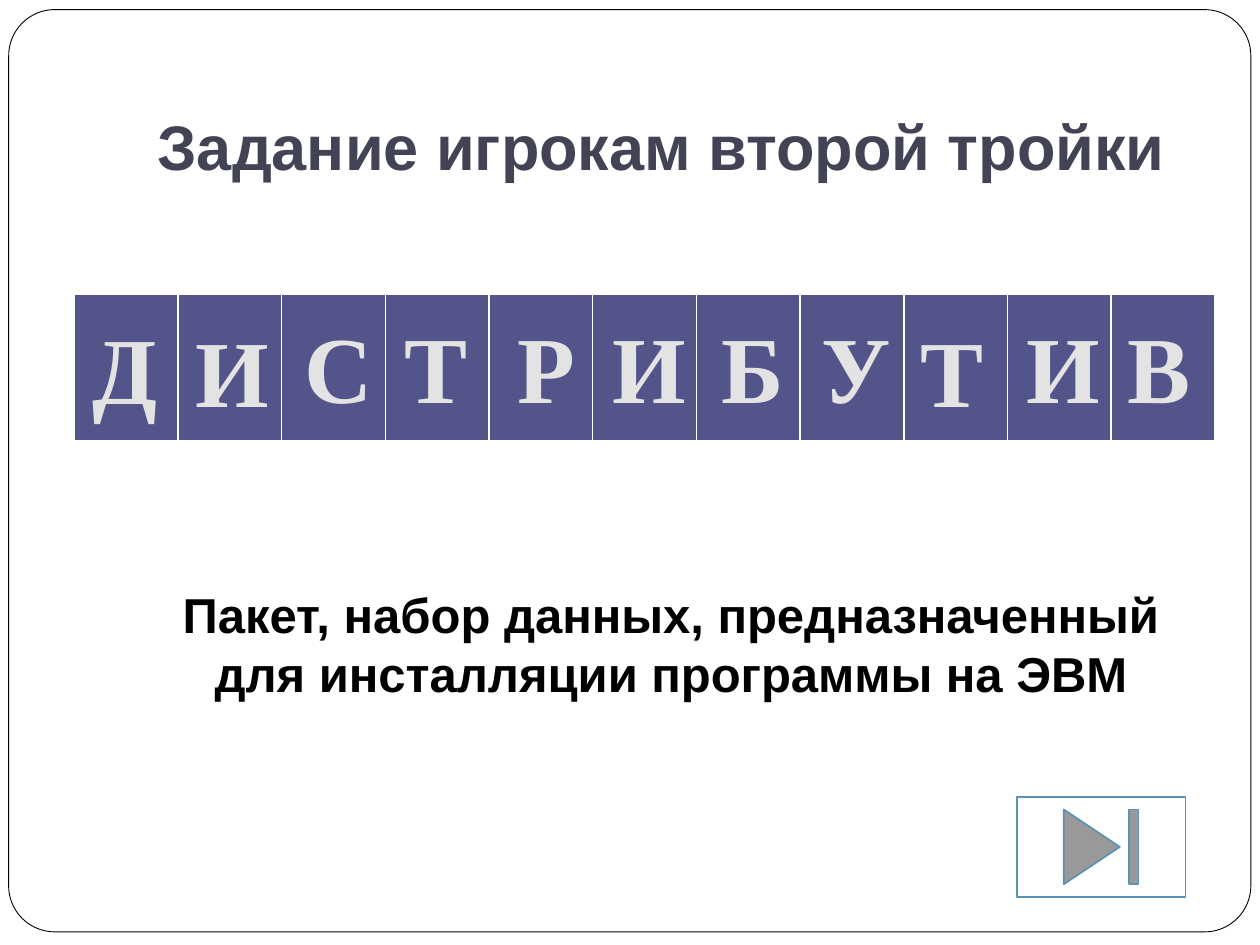
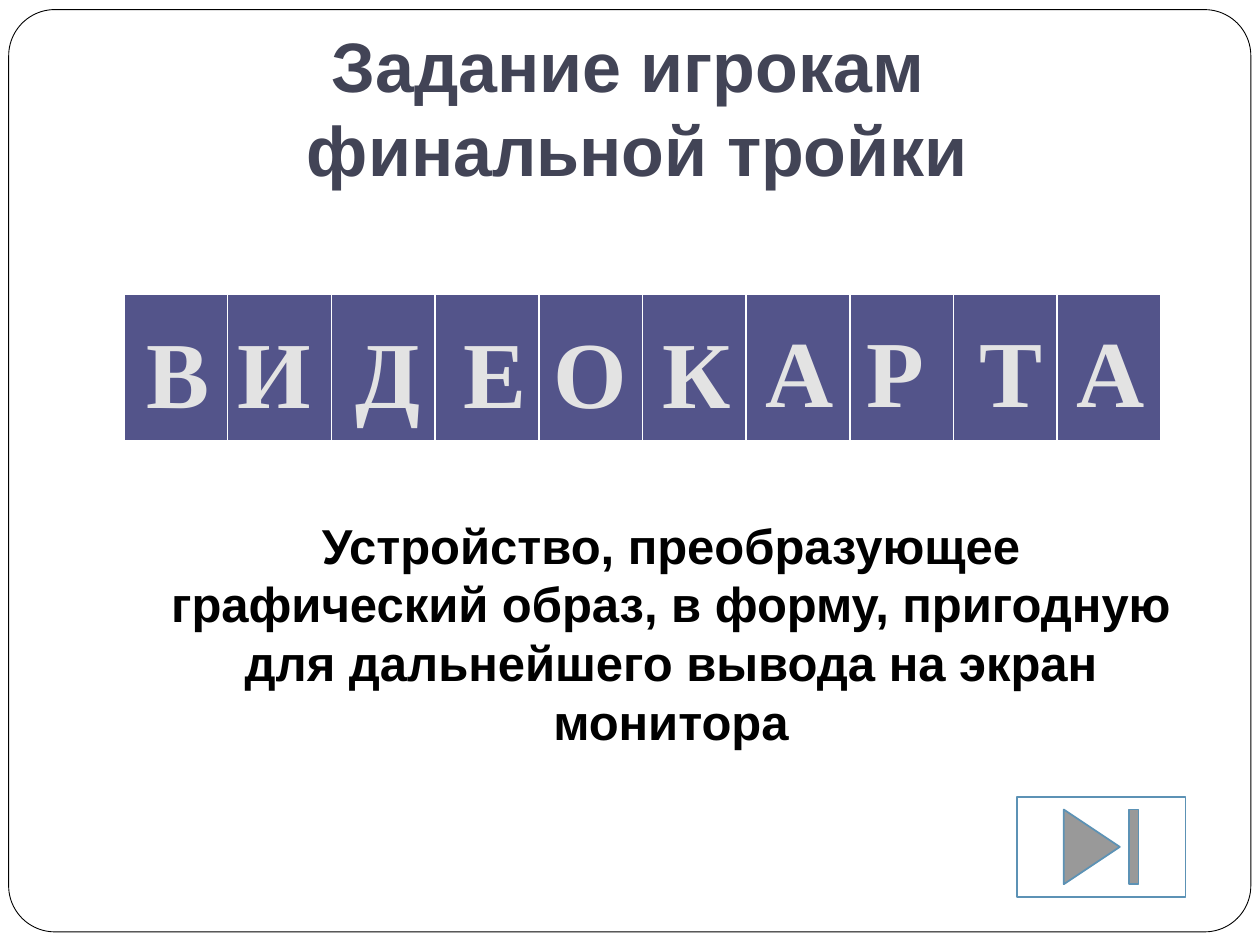
from lxml.etree import SubElement
from pptx import Presentation
from pptx.dml.color import RGBColor
from pptx.enum.shapes import MSO_SHAPE
from pptx.enum.text import MSO_ANCHOR, MSO_AUTO_SIZE, PP_ALIGN
from pptx.oxml.ns import qn
from pptx.util import Pt

WHITE = RGBColor(0xFF, 0xFF, 0xFF)
BLACK = RGBColor(0x00, 0x00, 0x00)
HEADING = RGBColor(0x42, 0x44, 0x56)
TILE = RGBColor(0x53, 0x54, 0x8A)
LETTER = RGBColor(0xE3, 0xE3, 0xE3)
LETTER_EDGE = RGBColor(0x3D, 0x40, 0x5C)
BUTTON_EDGE = RGBColor(0x5C, 0x92, 0xB5)

# Content: letters are (letter, centre x, top), all lengths in points
TASKS = [
    {
        "title": "Задание игрокам второй тройки",
        "title_size": 36,
        "title_box": (72, 21.6, 612, 90),
        "letters": [
            ("Д", 71.5, 173.5), ("И", 133, 175.5), ("С", 193.5, 173),
            ("Т", 249, 173), ("Р", 312, 173), ("И", 371, 173),
            ("Б", 430, 173), ("У", 489.5, 173), ("Т", 544, 175.5),
            ("И", 607.5, 173), ("В", 662.5, 173),
        ],
        "table_left": 42.5,
        "clue": "Пакет, набор данных, предназначенный для инсталляции программы на ЭВМ",
        "clue_inset": 220,
    },
    {
        "title": "Задание игрокам \vфинальной тройки",
        "title_size": 40,
        "title_box": (8.5, 31.7, 711.4, 84.2),
        "letters": [
            ("В", 101.5, 176), ("И", 156.5, 176), ("Д", 221.5, 176),
            ("Е", 283, 176), ("О", 337.5, 176), ("К", 398, 176),
            ("А", 457, 175.5), ("Р", 511.5, 175.5), ("Т", 578, 175.5),
            ("А", 634.5, 175.5),
        ],
        "table_left": 70.9,
        "clue": "Устройство, преобразующее графический образ, в форму, "
                "пригодную для дальнейшего вывода на экран монитора",
        "clue_inset": 180.5,
    },
]

CLUE_BOX = (72, 113.8, 612, 360)
BUTTON_BOX = (581, 455.5, 96.5, 56.9)
FRAME_BOX = (5, 5.5, 709.8, 527)
TILE_W, TILE_H, TILE_TOP = 59.25, 84.7, 168.1
LETTER_W, LETTER_H = 58, 72.7
BORDERS = {"a:lnL": 1, "a:lnR": 1, "a:lnT": 1, "a:lnB": 3}


def pts(box):
    return [Pt(v) for v in box]


def write(sp, text, size, color, font="Arial", anchor=MSO_ANCHOR.TOP, wrap=True):
    """Fill a shape with one bold centred paragraph and return the paragraph."""
    tf = sp.text_frame
    tf.auto_size = MSO_AUTO_SIZE.NONE
    tf.word_wrap = wrap
    tf.vertical_anchor = anchor
    p = tf.paragraphs[0]
    p.text = text
    p.alignment = PP_ALIGN.CENTER
    for r in p.runs:
        r.font.name, r.font.size = font, Pt(size)
        r.font.bold = True
        r.font.color.rgb = color
    return p


def add_line_xml(parent, tag, color, width):
    ln = SubElement(parent, qn(tag), w=str(Pt(width)))
    SubElement(SubElement(ln, qn("a:solidFill")), qn("a:srgbClr"), val=str(color))
    return ln


def add_outlined_shape(slide, kind, box, edge, width):
    sp = slide.shapes.add_shape(kind, *pts(box))
    sp.shadow.inherit = False
    sp.fill.solid()
    sp.fill.fore_color.rgb = WHITE
    sp.line.color.rgb = edge
    sp.line.width = Pt(width)
    return sp


def place(sp, box):
    sp.left, sp.top, sp.width, sp.height = pts(box)


def add_tiles(slide, left, count):
    table = slide.shapes.add_table(
        1, count, *pts((left, TILE_TOP, TILE_W * count, TILE_H))).table
    table.first_row = table.horz_banding = False
    for column in table.columns:
        column.width = Pt(TILE_W)
    for cell in table.iter_cells():
        tc_pr = cell._tc.get_or_add_tcPr()
        for tag, width in BORDERS.items():
            add_line_xml(tc_pr, tag, WHITE, width)
        cell.fill.solid()
        cell.fill.fore_color.rgb = TILE


def add_letter(slide, letter, centre, top):
    sp = slide.shapes.add_textbox(
        *pts((centre - LETTER_W / 2, top, LETTER_W, LETTER_H)))
    p = write(sp, letter, 54, LETTER, font="Times New Roman", wrap=False)
    r_pr = p.runs[0].font._element
    r_pr.insert(0, add_line_xml(r_pr, "a:ln", LETTER_EDGE, 1))


def add_task(prs, task):
    slide = prs.slides.add_slide(prs.slide_layouts[1])
    title, body = slide.placeholders

    # Title
    place(title, task["title_box"])
    write(title, task["title"], task["title_size"], HEADING, anchor=MSO_ANCHOR.BOTTOM)
    title.text_frame.margin_bottom = Pt(7.2)

    # Clue below the word
    place(body, CLUE_BOX)
    p = write(body, task["clue"], 28, BLACK)
    body.text_frame.margin_top = Pt(task["clue_inset"])
    p.space_before = Pt(0)
    p_pr = p._p.get_or_add_pPr()
    p_pr.set("marL", str(Pt(10.8)))
    p_pr.set("indent", "0")
    SubElement(p_pr, qn("a:buNone"))

    # Word on tiles
    add_tiles(slide, task["table_left"], len(task["letters"]))
    for letter in task["letters"]:
        add_letter(slide, *letter)

    # Button to the end
    add_outlined_shape(slide, MSO_SHAPE.ACTION_BUTTON_END, BUTTON_BOX, BUTTON_EDGE, 1)
    return slide


def add_master_frame(prs, slide):
    """Draw the rounded frame once, behind everything on the master."""
    sp = add_outlined_shape(slide, MSO_SHAPE.ROUNDED_RECTANGLE, FRAME_BOX, BLACK, 0.5)
    sp.adjustments[0] = 0.05
    prs.slide_master.shapes.element.insert(2, sp.element)


def main():
    prs = Presentation()
    prs.slide_width, prs.slide_height = Pt(720), Pt(540)
    slides = [add_task(prs, task) for task in TASKS]
    add_master_frame(prs, slides[0])
    prs.save("out.pptx")


if __name__ == "__main__":
    main()
